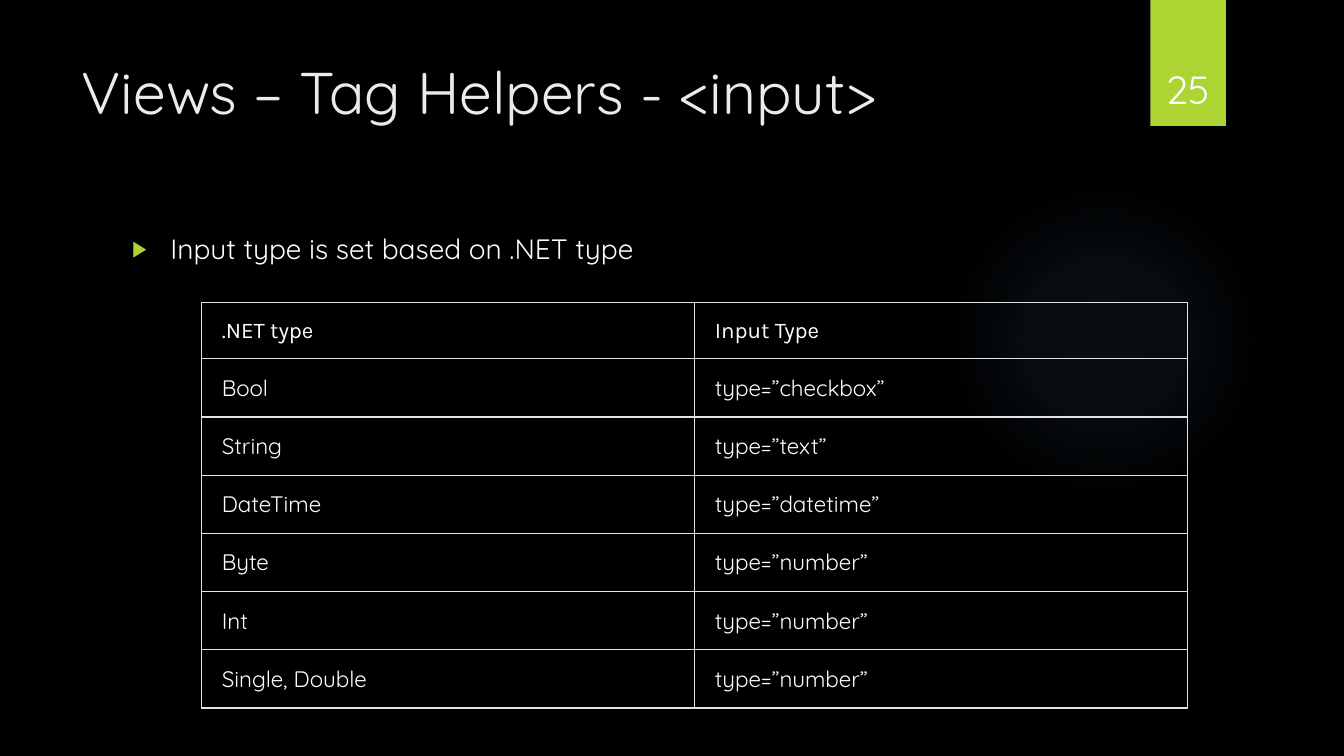
from dataclasses import dataclass

from lxml import etree
from pptx import Presentation
from pptx.dml.color import RGBColor
from pptx.enum.shapes import MSO_SHAPE as Shape
from pptx.enum.text import MSO_ANCHOR as Anchor, MSO_AUTO_SIZE as AutoSize, PP_ALIGN as Align
from pptx.oxml import parse_xml
from pptx.oxml.ns import nsdecls, qn
from pptx.util import Inches, Pt


@dataclass(frozen=True)
class Theme:
    background: str = "000000"
    accent: str = "ACD433"
    glow: str = "7AC4F0"
    title: str = "EBEBEB"
    text: str = "FFFFFF"
    border: str = "E3E3E3"
    font: str = "Quicksand"
    header_font: str = "Karla"
    title_size: int = 42
    number_size: int = 28
    body_size: int = 20
    table_size: int = 16


@dataclass(frozen=True)
class Box:
    left: float
    top: float
    width: float
    height: float

    def lengths(self) -> tuple:
        return tuple(Inches(value) for value in (self.left, self.top, self.width, self.height))


@dataclass(frozen=True)
class TypeMapping:
    net_type: str
    input_type: str


THEME = Theme()
GLOW_BOX = Box(9.41, 1.83, 3.08, 3.08)
BAR_BOX = Box(11.41, 0, 0.75, 1.25)
TITLE_BOX = Box(0.71, 0.5, 10.29, 1.53)
BODY_BOX = Box(1.21, 2.25, 9.78, 4.59)
NUMBER_BOX = Box(11.32, 0.32, 0.92, 0.84)
TABLE_BOX = Box(2, 3, 9.78, 3.93)
HEADER_HEIGHT = 0.55
ROW_HEIGHT = 0.56
GLOW_STOPS = ((0, 7), (36, 6), (69, 0))
MAPPINGS = (
    TypeMapping(".NET type", "Input Type"),
    TypeMapping("Bool", "type=”checkbox”"),
    TypeMapping("String", "type=”text”"),
    TypeMapping("DateTime", "type=”datetime”"),
    TypeMapping("Byte", "type=”number”"),
    TypeMapping("Int", "type=”number”"),
    TypeMapping("Single, Double", "type=”number”"),
)


def apply_format(target, values: dict) -> None:
    for name, value in values.items():
        setattr(target, name, value)


def style_paragraph(paragraph, size: int, color: str, font: str = THEME.font,
                    align=Align.LEFT) -> None:
    paragraph.alignment = align
    apply_format(paragraph.font, {"name": font, "size": Pt(size), "bold": False})
    paragraph.font.color.rgb = RGBColor.from_string(color)


def place_text(shape, box: Box, text: str, anchor=Anchor.TOP):
    apply_format(shape, dict(zip(("left", "top", "width", "height"), box.lengths())))
    frame = shape.text_frame
    frame.text = text
    apply_format(frame, {"word_wrap": True, "auto_size": AutoSize.NONE, "vertical_anchor": anchor})
    return frame.paragraphs[0]


def add_plain_shape(slide, kind, box: Box):
    shape = slide.shapes.add_shape(kind, *box.lengths())
    shape.shadow.inherit = False
    shape.line.fill.background()
    return shape


def add_glow(slide) -> None:
    glow = add_plain_shape(slide, Shape.OVAL, GLOW_BOX)
    stops = "".join(
        f'<a:gs pos="{position * 1000}"><a:srgbClr val="{THEME.glow}">'
        f'<a:alpha val="{alpha * 1000}"/></a:srgbClr></a:gs>'
        for position, alpha in GLOW_STOPS
    )
    gradient = parse_xml(
        f'<a:gradFill {nsdecls("a")}><a:gsLst>{stops}</a:gsLst><a:path path="circle">'
        '<a:fillToRect l="50000" t="50000" r="50000" b="50000"/></a:path></a:gradFill>'
    )
    glow.element.spPr.find(qn("a:prstGeom")).addnext(gradient)


def add_page_number(slide, number: str) -> None:
    bar = add_plain_shape(slide, Shape.RECTANGLE, BAR_BOX)
    bar.fill.solid()
    bar.fill.fore_color.rgb = RGBColor.from_string(THEME.accent)
    label = slide.shapes.add_textbox(*NUMBER_BOX.lengths())
    paragraph = place_text(label, NUMBER_BOX, number, Anchor.BOTTOM)
    style_paragraph(paragraph, THEME.number_size, THEME.text, align=Align.CENTER)


def add_bullet(paragraph) -> None:
    properties = paragraph._p.get_or_add_pPr()
    indent = Inches(0.38)
    properties.set("marL", str(indent))
    properties.set("indent", str(-indent))
    color = etree.SubElement(properties, qn("a:buClr"))
    etree.SubElement(color, qn("a:srgbClr"), val=THEME.accent)
    etree.SubElement(properties, qn("a:buSzPct"), val="80000")
    etree.SubElement(properties, qn("a:buFont"), typeface="Arial")
    etree.SubElement(properties, qn("a:buChar"), char="▶")


def add_borders(cell) -> None:
    properties = cell._tc.get_or_add_tcPr()
    for position, side in enumerate(("lnL", "lnR", "lnT", "lnB")):
        line = parse_xml(
            f'<a:{side} {nsdecls("a")} w="{Pt(1)}"><a:solidFill>'
            f'<a:srgbClr val="{THEME.border}"/></a:solidFill></a:{side}>'
        )
        properties.insert(position, line)


def fill_cell(cell, text: str, is_header: bool) -> None:
    cell.text = text
    apply_format(cell, {
        "margin_left": Inches(0.2),
        "margin_right": Inches(0.2),
        "margin_top": Inches(0.15),
        "margin_bottom": Inches(0.15),
        "vertical_anchor": Anchor.BOTTOM if is_header else Anchor.TOP,
    })
    cell.fill.background()
    add_borders(cell)
    font = THEME.header_font if is_header else THEME.font
    style_paragraph(cell.text_frame.paragraphs[0], THEME.table_size, THEME.text, font)


def add_type_table(slide) -> None:
    table = slide.shapes.add_table(len(MAPPINGS), 2, *TABLE_BOX.lengths()).table
    apply_format(table, {"first_row": False, "horz_banding": False})
    for column in table.columns:
        column.width = Inches(TABLE_BOX.width / 2)
    for index, mapping in enumerate(MAPPINGS):
        is_header = index == 0
        table.rows[index].height = Inches(HEADER_HEIGHT if is_header else ROW_HEIGHT)
        for column, text in enumerate((mapping.net_type, mapping.input_type)):
            fill_cell(table.cell(index, column), text, is_header)


def main() -> None:
    presentation = Presentation()
    apply_format(presentation, {"slide_width": Inches(13.33), "slide_height": Inches(7.5)})
    slide = presentation.slides.add_slide(presentation.slide_layouts[1])
    slide.background.fill.solid()
    slide.background.fill.fore_color.rgb = RGBColor.from_string(THEME.background)

    add_glow(slide)
    title = place_text(slide.shapes.title, TITLE_BOX, "Views – Tag Helpers - <input>")
    style_paragraph(title, THEME.title_size, THEME.title)
    body = place_text(slide.placeholders[1], BODY_BOX, "Input type is set based on .NET type")
    body.space_before = Pt(0)
    add_bullet(body)
    style_paragraph(body, THEME.body_size, THEME.text)
    add_page_number(slide, "25")
    add_type_table(slide)
    presentation.save("out.pptx")


if __name__ == "__main__":
    main()
